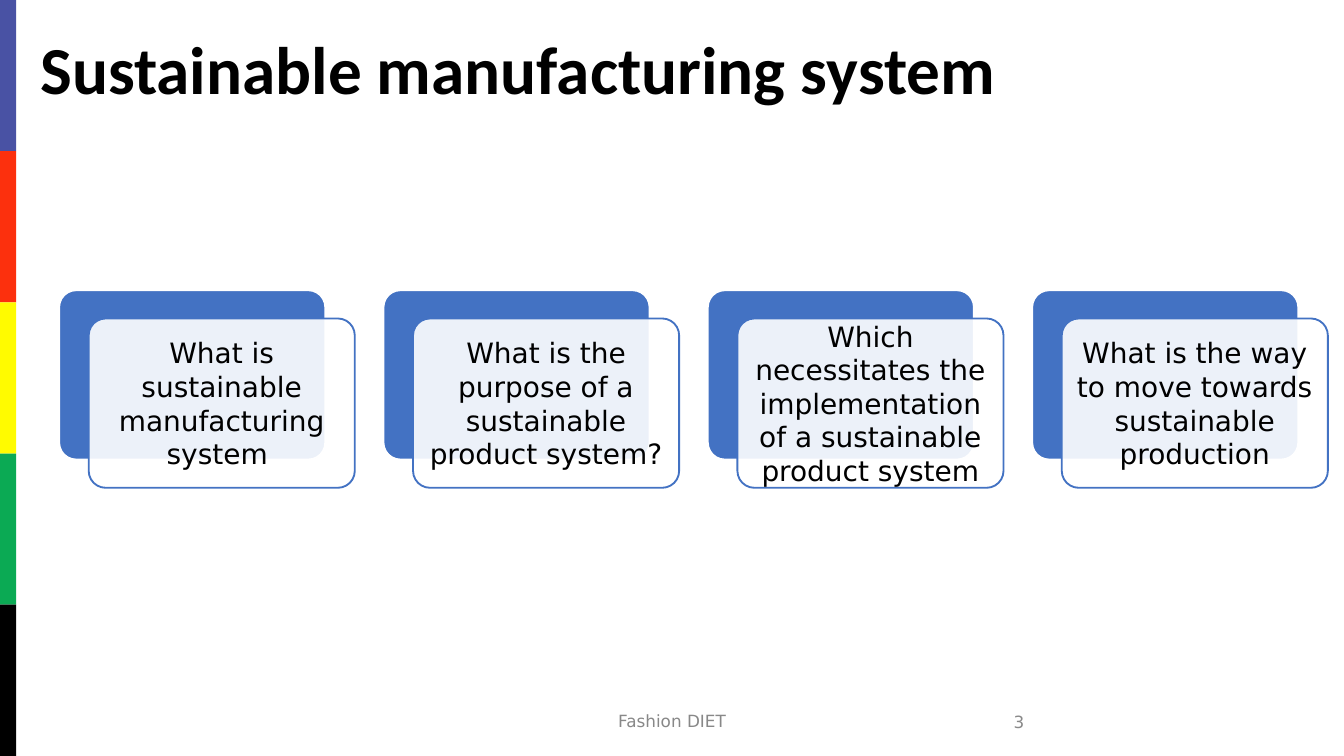
from lxml.etree import SubElement
from pptx import Presentation
from pptx.dml.color import RGBColor
from pptx.enum.shapes import MSO_SHAPE as Shape
from pptx.enum.text import MSO_ANCHOR as Anchor, MSO_AUTO_SIZE as AutoSize, PP_ALIGN as Align
from pptx.oxml.ns import qn
from pptx.util import Inches, Pt

TITLE = "Sustainable manufacturing system"
QUESTIONS = [
    "What is sustainable manufacturing system ",
    "What is the purpose of a sustainable product system?",
    "Which necessitates the implementation of a sustainable product system",
    "What is the way to move towards sustainable production",
]

BLACK = RGBColor(0x00, 0x00, 0x00)
WHITE = RGBColor(0xFF, 0xFF, 0xFF)
BLUE = RGBColor(0x43, 0x72, 0xC3)
GREY = RGBColor(0x88, 0x88, 0x88)
NUMBER_GREY = RGBColor(0x89, 0x89, 0x89)
STRIPES = [
    RGBColor(0x49, 0x52, 0xA4),
    RGBColor(0xFC, 0x30, 0x0D),
    RGBColor(0xFF, 0xFB, 0x00),
    RGBColor(0x0B, 0xAA, 0x54),
    BLACK,
]
FOOTERS = [
    ("Fashion DIET", (3.31, 5.21, 3.38, 0.3), Align.CENTER, GREY),
    ("3", (5.47, 5.22, 2.25, 0.3), Align.RIGHT, NUMBER_GREY),
]

WIDTH = 10
HEIGHT = WIDTH * 9 / 16
STRIPE_WIDTH = 0.12
CARD_TOP, CARD_WIDTH, CARD_HEIGHT = 2.16, 1.98, 1.26
FIRST_LEFT, LAST_LEFT = 0.44, 7.68
SHIFT_RIGHT, SHIFT_DOWN = 0.22, 0.21
CARD_OPACITY = 90

BODY_FONT = {"name": "DejaVu Sans", "size": Pt(15), "color": BLACK}
TITLE_FONT = {"name": "Calibri", "size": Pt(36), "bold": True, "color": BLACK}


def write(shape, text, font, align, margins=(0.1, 0.05)):
    frame = shape.text_frame
    side, edge = map(Inches, margins)
    layout = {
        "word_wrap": True, "auto_size": AutoSize.NONE, "vertical_anchor": Anchor.MIDDLE,
        "margin_left": side, "margin_right": side, "margin_top": edge, "margin_bottom": edge,
    }
    for name, value in layout.items():
        setattr(frame, name, value)
    frame.text = text
    paragraph = frame.paragraphs[0]
    paragraph.alignment = align
    for name, value in font.items():
        if name == "color":
            paragraph.runs[0].font.color.rgb = value
        else:
            setattr(paragraph.runs[0].font, name, value)
    return paragraph


def add_block(slide, kind, box, fill, line=None):
    block = slide.shapes.add_shape(kind, *map(Inches, box))
    block.shadow.inherit = False
    block.fill.solid()
    block.fill.fore_color.rgb = fill
    if line is None:
        block.line.fill.background()
    else:
        block.line.color.rgb = line
        block.line.width = Pt(1)
    return block


def add_card(slide, left, question):
    size = (CARD_WIDTH, CARD_HEIGHT)
    back = add_block(slide, Shape.ROUNDED_RECTANGLE, (left, CARD_TOP, *size), BLUE, WHITE)
    front = add_block(slide, Shape.ROUNDED_RECTANGLE,
                      (left + SHIFT_RIGHT, CARD_TOP + SHIFT_DOWN, *size), WHITE, BLUE)
    for panel in (back, front):
        panel.adjustments[0] = 0.1
    tint = front.fill._xPr.find(qn("a:solidFill"))[0]
    SubElement(tint, qn("a:alpha"), val=str(CARD_OPACITY * 1000))
    write(front, question, BODY_FONT, Align.CENTER, (0.06, 0.06))


def main():
    deck = Presentation()
    deck.slide_width, deck.slide_height = Inches(WIDTH), Inches(HEIGHT)
    slide = deck.slides.add_slide(deck.slide_layouts[5])

    stripe_height = HEIGHT / len(STRIPES)
    for row, color in enumerate(STRIPES):
        add_block(slide, Shape.RECTANGLE,
                  (0, row * stripe_height, STRIPE_WIDTH, stripe_height), color)

    title = slide.shapes.title
    title.left, title.top, title.width, title.height = map(Inches, (0.2, 0, 9.12, 1.09))
    write(title, TITLE, TITLE_FONT, Align.LEFT).line_spacing = 0.9

    card_step = (LAST_LEFT - FIRST_LEFT) / (len(QUESTIONS) - 1)
    for column, question in enumerate(QUESTIONS):
        add_card(slide, FIRST_LEFT + column * card_step, question)

    for text, box, align, color in FOOTERS:
        footer = slide.shapes.add_textbox(*map(Inches, box))
        write(footer, text, {**BODY_FONT, "size": Pt(9), "color": color}, align)

    deck.save("out.pptx")


if __name__ == "__main__":
    main()
